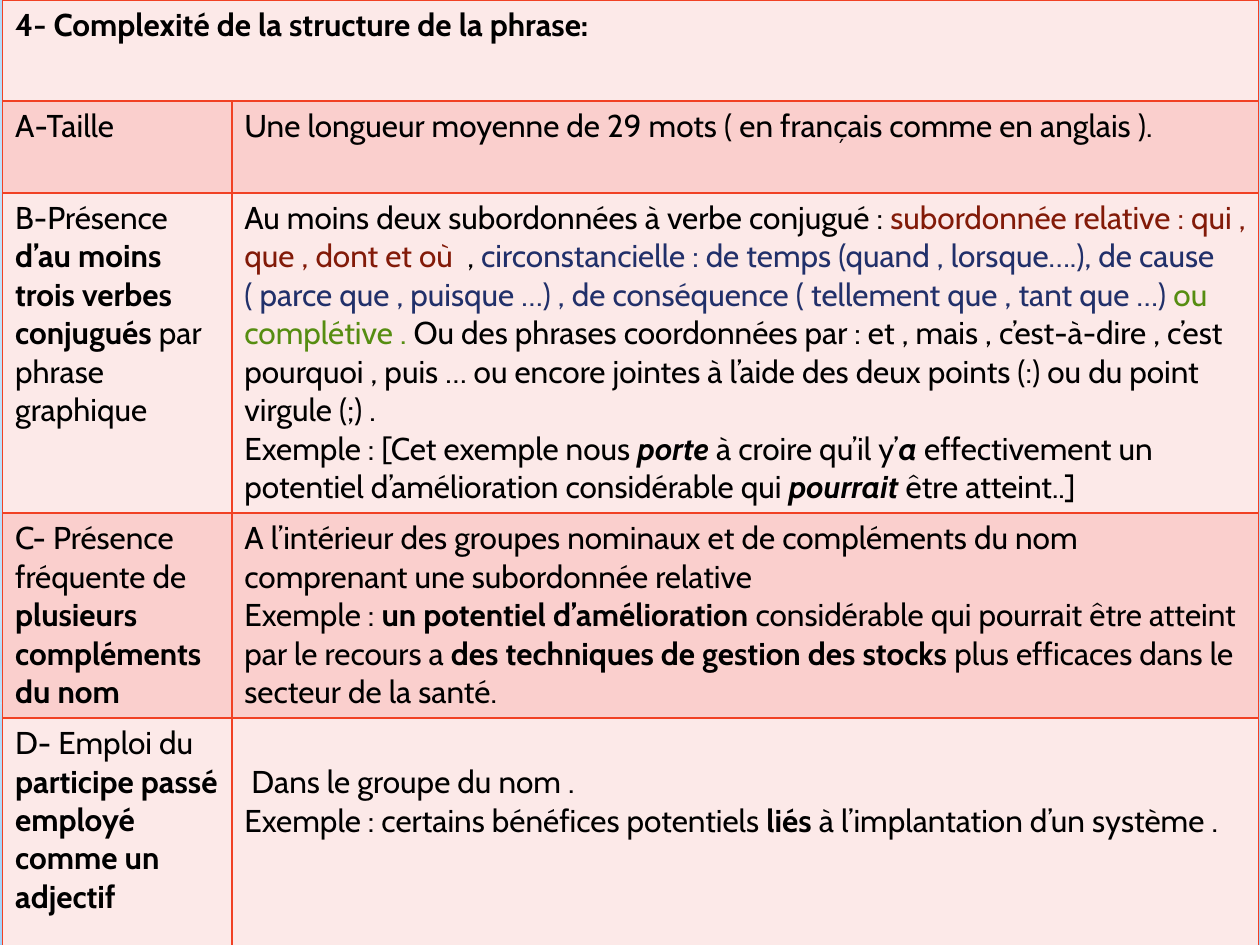
import pptx
import pptx.dml.color
import pptx.enum.shapes
import pptx.oxml
import pptx.oxml.ns
import pptx.util

SLIDE_WIDTH, SLIDE_HEIGHT = 10, 7.5
TABLE_LEFT = 0.02
COLUMN_WIDTHS = [1.82, 8.15]
ROW_HEIGHTS = [0.8, 0.73, 2.49, 1.59, 1.89]
ROW_FILLS = ["FCE9E8", "FACFCD"]
BORDER = "F14124"
LINE_HEIGHT = 0.31

# Gradient stops are (position, colour, opacity), in percent.
CENTRE = (50, 50, 50, 50)
SKY_STOPS = [(0, "9ED5FF", 100), (60, "FFFFFF", 100), (100, "5BB9FF", 100)]
SKY_FOCUS = (20, 10, 20, 60)
RECTANGLE = pptx.enum.shapes.MSO_SHAPE.RECTANGLE
OVAL = pptx.enum.shapes.MSO_SHAPE.OVAL
# Full-width glows: preset, top, height, stops, focus (None for a vertical gradient).
GLOWS = [
    (RECTANGLE, 5.58, 1.92,
     [(0, "FFFFFF", 91), (37, "FFFFFF", 76), (100, "B4DCFA", 79)], CENTRE),
    (RECTANGLE, 0, 5.58,
     [(0, "FFFFFF", 89), (48, "FFFFFF", 62), (100, "B4DCFA", 79)], CENTRE),
    (RECTANGLE, 4.12, 2.5,
     [(0, "FFFFFF", 0), (29, "FFFFFF", 30), (45, "B4DCFA", 40),
      (55, "FFFFFF", 26), (65, "B4DCFA", 60), (100, "FFFFFF", 0)], None),
    (OVAL, 1.75, 5.58, [(0, "FFFFFF", 100), (56, "FFFFFF", 0)], CENTRE),
]

PLAIN = {"name": "Cabin", "size": pptx.util.Pt(18), "bold": False, "italic": False}
STYLES = {
    "plain": ({}, "000000"),
    "bold": ({"bold": True}, "000000"),
    "verb": ({"bold": True, "italic": True}, "000000"),
    "relative": ({}, "821A08"),
    "adverbial": ({}, "21306A"),
    "completive": ({}, "568D11"),
}

# Rows of cells; a cell is a list of paragraphs, a paragraph a list of (text, style).
ROWS = [
    [[[("4- Complexité de la structure de la phrase:", "bold")]]],
    [
        [[("A-Taille", "plain")]],
        [[("Une longueur moyenne de 29 mots ( en français comme en anglais ).", "plain")]],
    ],
    [
        [[("B-Présence ", "plain"), ("d’au moins trois verbes conjugués ", "bold"),
          ("par phrase graphique", "plain")]],
        [
            [("Au moins deux subordonnées à verbe conjugué : ", "plain"),
             ("subordonnée relative : qui , que , dont et où ", "relative"),
             (" , ", "plain"),
             ("circonstancielle : de temps (quand , lorsque….), de cause ( parce que , "
              "puisque …) , de conséquence ( tellement que , tant que …) ", "adverbial"),
             ("ou complétive . ", "completive"),
             ("Ou des phrases coordonnées par : et , mais , c’est-à-dire , c’est pourquoi , "
              "puis … ou encore jointes à l’aide des deux points (:) ou du point virgule (;) .",
              "plain")],
            [("Exemple : [Cet exemple nous ", "plain"), ("porte ", "verb"),
             ("à croire qu’il y’", "plain"), ("a", "verb"),
             (" effectivement un potentiel d’amélioration considérable qui ", "plain"),
             ("pourrait", "verb"), (" être atteint..]", "plain")],
        ],
    ],
    [
        [[("C- Présence fréquente de ", "plain"), ("plusieurs compléments du nom", "bold")]],
        [
            [("A l’intérieur des groupes nominaux et de compléments du nom "
              "comprenant une subordonnée relative", "plain")],
            [("Exemple : ", "plain"), ("un potentiel d’amélioration ", "bold"),
             ("considérable qui pourrait être atteint par le recours a ", "plain"),
             ("des techniques de gestion des stocks ", "bold"),
             ("plus efficaces dans le secteur de la santé.", "plain")],
        ],
    ],
    [
        [[("D- Emploi du ", "plain"), ("participe passé employé comme un adjectif", "bold")]],
        [
            [(" Dans le groupe du nom .", "plain")],
            [("Exemple : certains bénéfices potentiels ", "plain"), ("liés", "bold"),
             (" à l’implantation d’un système .", "plain")],
        ],
    ],
]


def paint(fill, color):
    fill.solid()
    fill.fore_color.rgb = pptx.dml.color.RGBColor.from_string(color)


def paint_gradient(fill, properties, stops, focus):
    """Replace the fill in properties by a circular gradient, or a vertical one without focus."""
    fill.solid()
    stop_xml = "".join(
        f'<a:gs pos="{position * 1000}"><a:srgbClr val="{color}">'
        f'<a:alpha val="{opacity * 1000}"/></a:srgbClr></a:gs>'
        for position, color, opacity in stops)
    if focus:
        sides = " ".join(f'{side}="{share * 1000}"' for side, share in zip("ltrb", focus))
        direction = f'<a:path path="circle"><a:fillToRect {sides}/></a:path>'
    else:
        direction = '<a:lin ang="5400000" scaled="0"/>'
    gradient = pptx.oxml.parse_xml(
        f'<a:gradFill {pptx.oxml.ns.nsdecls("a")} rotWithShape="1">'
        f'<a:gsLst>{stop_xml}</a:gsLst>{direction}</a:gradFill>')
    solid = properties.find(pptx.oxml.ns.qn("a:solidFill"))
    properties.replace(solid, gradient)


def add_borders(cell):
    properties = cell._tc.get_or_add_tcPr()
    for position, side in enumerate(("lnL", "lnR", "lnT", "lnB")):
        line = pptx.oxml.parse_xml(
            f'<a:{side} {pptx.oxml.ns.nsdecls("a")} w="{pptx.util.Pt(1)}"><a:solidFill>'
            f'<a:srgbClr val="{BORDER}"/></a:solidFill></a:{side}>')
        properties.insert(position, line)


def write_paragraphs(text_frame, paragraphs):
    for index, runs in enumerate(paragraphs):
        paragraph = text_frame.add_paragraph() if index else text_frame.paragraphs[0]
        for text, style in runs:
            run = paragraph.add_run()
            run.text = text
            changes, color = STYLES[style]
            for attribute, value in {**PLAIN, **changes}.items():
                setattr(run.font, attribute, value)
            paint(run.font.fill, color)


def main():
    inches = pptx.util.Inches
    presentation = pptx.Presentation()
    presentation.slide_width = inches(SLIDE_WIDTH)
    presentation.slide_height = inches(SLIDE_HEIGHT)
    slide = presentation.slides.add_slide(presentation.slide_layouts[6])

    background_fill = slide.background.fill
    background_fill.solid()
    background = slide._element.cSld.bg.bgPr
    paint_gradient(background_fill, background, SKY_STOPS, SKY_FOCUS)
    for preset, top, height, stops, focus in GLOWS:
        glow = slide.shapes.add_shape(
            preset, 0, inches(top), inches(SLIDE_WIDTH), inches(height))
        glow.shadow.inherit = False
        glow.line.fill.background()
        paint_gradient(glow.fill, glow._element.spPr, stops, focus)

    table = slide.shapes.add_table(
        len(ROW_HEIGHTS), len(COLUMN_WIDTHS), inches(TABLE_LEFT), 0,
        inches(sum(COLUMN_WIDTHS)), inches(sum(ROW_HEIGHTS))).table
    for column, width in zip(table.columns, COLUMN_WIDTHS):
        column.width = inches(width)
    for row, height in zip(table.rows, ROW_HEIGHTS):
        row.height = inches(height)
    table.cell(0, 0).merge(table.cell(0, 1))

    for row_index, row in enumerate(table.rows):
        for cell in row.cells:
            paint(cell.fill, ROW_FILLS[row_index % 2])
            add_borders(cell)
        for cell, paragraphs in zip(row.cells, ROWS[row_index]):
            write_paragraphs(cell.text_frame, paragraphs)

    # The last description starts one line lower than its heading.
    table.cell(4, 1).margin_top = inches(0.05 + LINE_HEIGHT)
    presentation.save("out.pptx")


if __name__ == "__main__":
    main()
